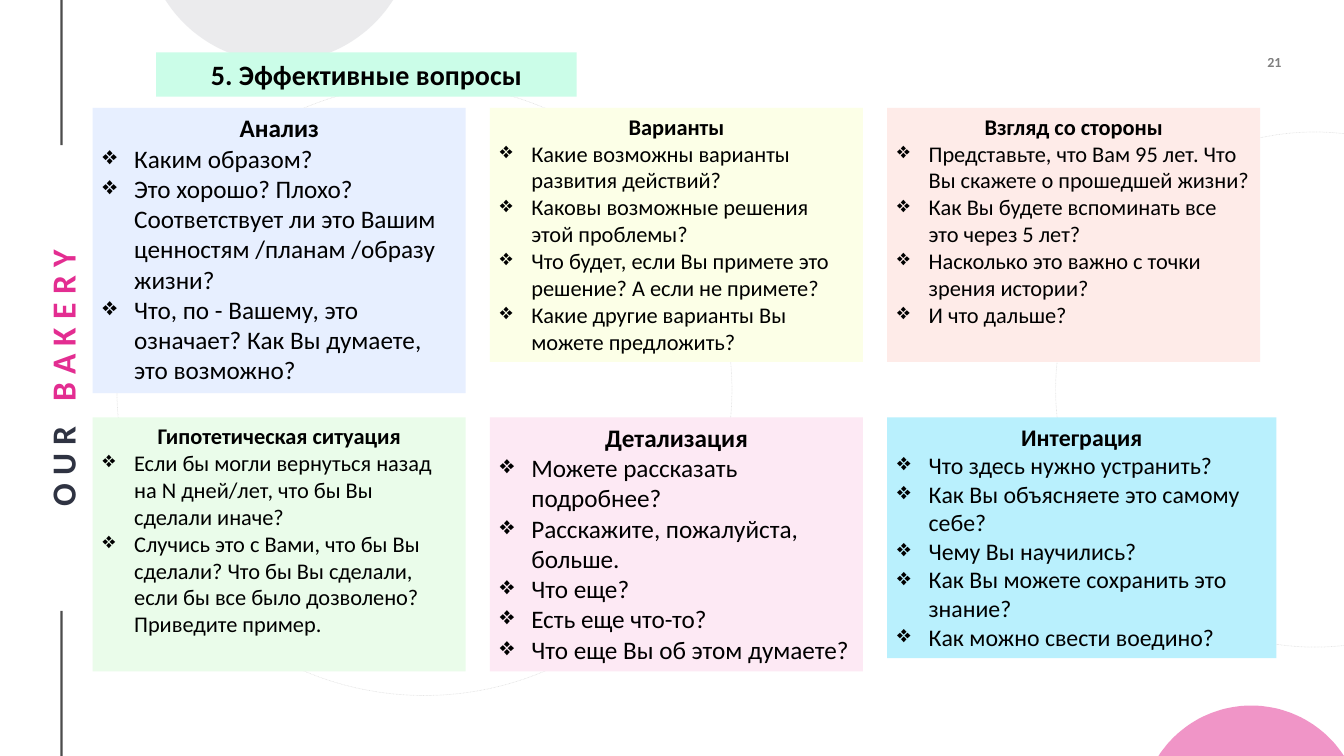
import math
from lxml import etree
from pptx import Presentation
from pptx import util as u
from pptx.dml.color import RGBColor
from pptx.enum import dml, shapes, text
from pptx.oxml import ns

BLACK = RGBColor(0x00, 0x00, 0x00)
NAVY = RGBColor(0x2F, 0x33, 0x42)
PINK = RGBColor(0xE3, 0x2D, 0x91)
GRAY = RGBColor(0xD8, 0xD9, 0xDC)
MINT = RGBColor(0xCB, 0xFD, 0xE8)
BLUE = RGBColor(0xE7, 0xEF, 0xFF)
YELLOW = RGBColor(0xFC, 0xFF, 0xE7)
ROSE = RGBColor(0xFE, 0xEB, 0xE8)
GREEN = RGBColor(0xEA, 0xFC, 0xEA)
LILAC = RGBColor(0xFD, 0xE9, 0xF4)
CYAN = RGBColor(0xB9, 0xF0, 0xFD)

W, H = 13.33, 7.5
FONT = "Calibri"
TITLE = "5. Эффективные вопросы"
PAGE = "21"
SIDE_LABEL = [("OUR ", NAVY), ("BAKERY", PINK)]
LEFT, TOP, COL_STEP, ROW_STEP = 0.92, 1.07, 3.94, 3.07
INDENT = u.Pt(22.5)
UNITS = 1000

CARDS = [
    ("Анализ", BLUE, 18, 3.7, 2.83, [
        "Каким образом?",
        "Это хорошо? Плохо? Соответствует ли это Вашим ценностям /планам /образу жизни?",
        "Что, по - Вашему, это означает? Как Вы думаете, это возможно?"]),
    ("Варианты", YELLOW, 16, 3.7, 2.52, [
        "Какие возможны варианты развития действий?",
        "Каковы возможные решения этой проблемы?",
        "Что будет, если Вы примете это решение? А если не примете?",
        "Какие другие варианты Вы можете предложить?"]),
    ("Взгляд со стороны", ROSE, 16, 3.7, 2.52, [
        "Представьте, что Вам 95 лет. Что Вы скажете о прошедшей жизни?",
        "Как Вы будете вспоминать все это через 5 лет?",
        "Насколько это важно с точки зрения истории?",
        "И что дальше?"]),
    ("Гипотетическая ситуация", GREEN, 16, 3.7, 2.52, [
        "Если бы могли вернуться назад на N дней/лет, что бы Вы сделали иначе?",
        "Случись это с Вами, что бы Вы сделали? Что бы Вы сделали, "
        "если бы все было дозволено? Приведите пример."]),
    ("Детализация", LILAC, 18, 3.7, 2.52, [
        "Можете рассказать подробнее?",
        "Расскажите, пожалуйста, больше.",
        "Что еще?",
        "Есть еще что-то?",
        "Что еще Вы об этом думаете?"]),
    ("Интеграция", CYAN, 17, 3.86, 2.39, [
        "Что здесь нужно устранить?",
        "Как Вы объясняете это самому себе?",
        "Чему Вы научились?",
        "Как Вы можете сохранить это знание?",
        "Как можно свести воедино?"]),
]
RAILS = [(6.06, H), (0, 1.44)]
RINGS = [(10.47, 1.31, 5.14, 5.11), (1.16, 0.83, 6.1, 6.07)]
CAPS = [(12.41, 0.92, H, -0.5, PINK), (2.77, 1.13, 0, 0.62, GRAY)]


def set_alpha(color_parent, percent):
    color = color_parent.find(".//" + ns.qn("a:srgbClr"))
    etree.SubElement(color, ns.qn("a:alpha"), val=str(percent * 1000))


def style_line(sp, width, dash, alpha):
    sp.line.color.rgb = BLACK
    sp.line.width = u.Pt(width)
    sp.line.dash_style = dash
    set_alpha(sp._element.spPr.find(ns.qn("a:ln")), alpha)


def add_rail(slide, start, end):
    x = u.Inches(0.61)
    rail = slide.shapes.add_connector(
        shapes.MSO_CONNECTOR.STRAIGHT, x, u.Inches(start), x, u.Inches(end))
    style_line(rail, 1.5, dml.MSO_LINE.SOLID, 70)
    etree.SubElement(rail._element.spPr, ns.qn("a:effectLst"))


def add_ring(slide, box):
    ring = slide.shapes.add_shape(shapes.MSO_SHAPE.OVAL, *map(u.Inches, box))
    ring.shadow.inherit = False
    ring.fill.background()
    style_line(ring, 0.5, dml.MSO_LINE.ROUND_DOT, 10)


def add_cap(slide, cx, half, edge, rise, color):
    radius = (half ** 2 + rise ** 2) / (2 * abs(rise))
    sweep = math.asin(half / radius)
    reach = math.copysign(radius, rise)
    cy = edge + rise - reach
    points = []
    for i in range(61):
        angle = sweep * (i / 30 - 1)
        points.append((UNITS * (cx + radius * math.sin(angle)),
                       UNITS * (cy + reach * math.cos(angle))))
    builder = slide.shapes.build_freeform(*points[0], scale=u.Inches(1) / UNITS)
    builder.add_line_segments(points[1:], close=True)
    sp = builder.convert_to_shape()
    sp.shadow.inherit = False
    sp.fill.solid()
    sp.fill.fore_color.rgb = color
    set_alpha(sp._element.spPr, 50)
    sp.line.fill.background()


def add_label(slide, box, inset):
    sp = slide.shapes.add_textbox(*map(u.Inches, box))
    tf = sp.text_frame
    tf.word_wrap = True
    tf.vertical_anchor = text.MSO_ANCHOR.MIDDLE
    tf.margin_left = tf.margin_right = u.Inches(inset)
    tf.margin_top = tf.margin_bottom = u.Inches(inset)
    return sp


def style_run(r, size, color, bold):
    r.font.name = FONT
    r.font.size = u.Pt(size)
    r.font.bold = bold
    r.font.color.rgb = color


def add_card(slide, box, color, size, heading, questions=()):
    sp = slide.shapes.add_shape(shapes.MSO_SHAPE.RECTANGLE, *map(u.Inches, box))
    sp.shadow.inherit = False
    sp.fill.solid()
    sp.fill.fore_color.rgb = color
    sp.line.fill.background()
    tf = sp.text_frame
    tf.word_wrap = True
    tf.vertical_anchor = text.MSO_ANCHOR.TOP
    tf.text = "\n".join([heading, *questions])
    for i, p in enumerate(tf.paragraphs):
        p.alignment = text.PP_ALIGN.LEFT if i else text.PP_ALIGN.CENTER
        style_run(p.runs[0], size, BLACK, i == 0)
        if i:
            pPr = p._p.get_or_add_pPr()
            pPr.set("marL", str(INDENT))
            pPr.set("indent", str(-INDENT))
            etree.SubElement(pPr, ns.qn("a:buChar"), char="❖")


def add_side_label(slide):
    sp = add_label(slide, (-1.69, 3.53, 4.61, 0.45), 0.02)
    sp.rotation = 270
    p = sp.text_frame.paragraphs[0]
    p.alignment = text.PP_ALIGN.CENTER
    for word, color in SIDE_LABEL:
        r = p.add_run()
        r.text = word
        style_run(r, 24, color, True)
        r.font._element.set("spc", "600")


def add_page_number(slide):
    sp = add_label(slide, (11.94, 0.48, 0.77, 0.27), 0)
    sp.text_frame.text = PAGE
    p = sp.text_frame.paragraphs[0]
    p.alignment = text.PP_ALIGN.RIGHT
    style_run(p.runs[0], 10, BLACK, True)
    set_alpha(p.runs[0].font._element, 50)


def main():
    prs = Presentation()
    prs.slide_width, prs.slide_height = u.Inches(W), u.Inches(H)
    slide = prs.slides.add_slide(prs.slide_layouts[6])
    for rail in RAILS:
        add_rail(slide, *rail)
    add_side_label(slide)
    add_page_number(slide)
    for ring in RINGS:
        add_ring(slide, ring)
    for cap in CAPS:
        add_cap(slide, *cap)
    add_card(slide, (1.55, 0.52, 4.17, 0.44), MINT, 20, TITLE)
    for i, (heading, color, size, width, height, questions) in enumerate(CARDS):
        row, col = divmod(i, 3)
        box = (LEFT + col * COL_STEP, TOP + row * ROW_STEP, width, height)
        add_card(slide, box, color, size, heading, questions)
    prs.save("out.pptx")


if __name__ == "__main__":
    main()
